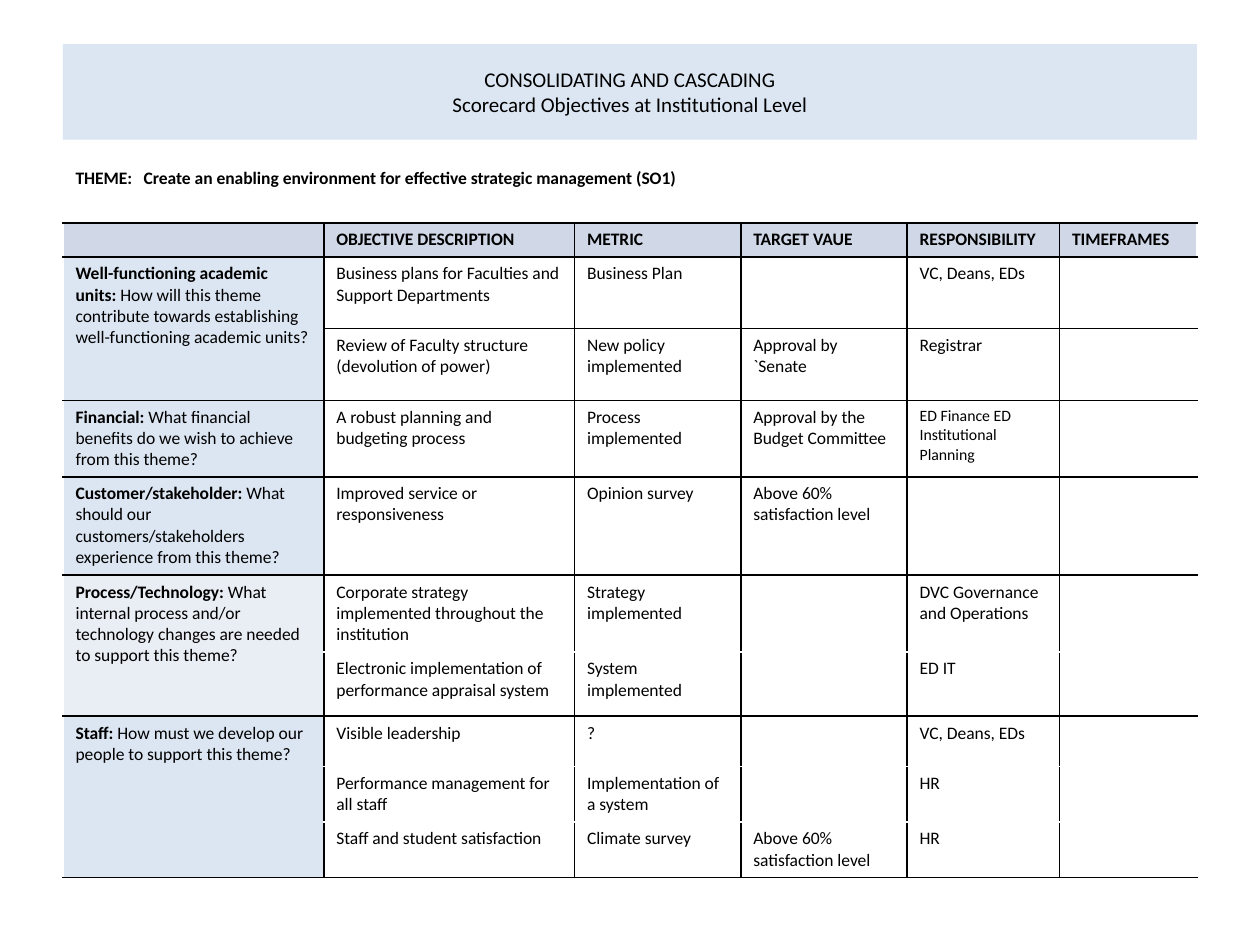
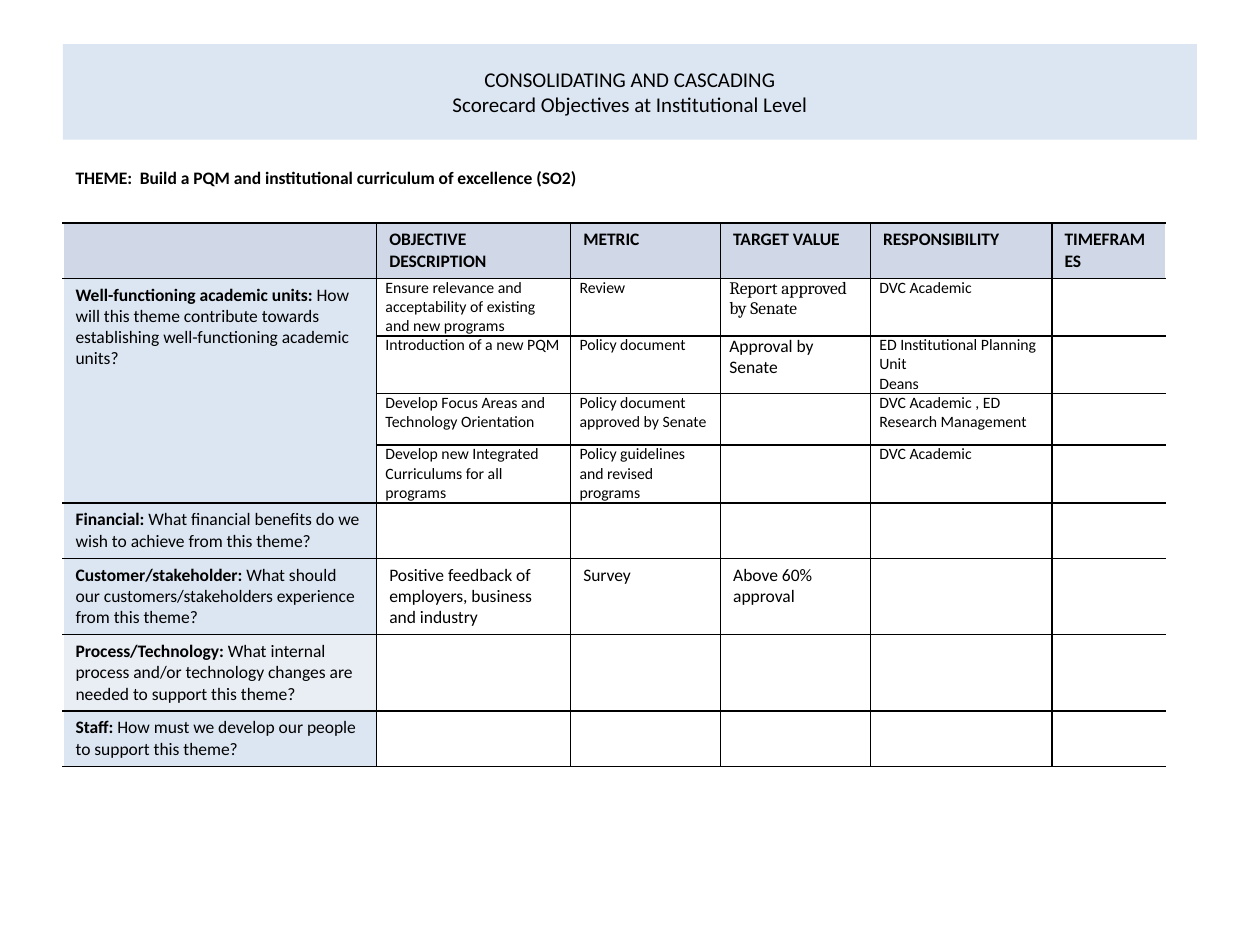
import pptx
import pptx.dml.color
import pptx.enum.shapes
import pptx.enum.text
import pptx.oxml.ns
import pptx.util
from lxml import etree

Inches, Pt = pptx.util.Inches, pptx.util.Pt
qn = pptx.oxml.ns.qn

COLORS = {"text": "000000", "line": "000000", "blank": "FFFFFF",
          "band": "DCE6F2", "header": "D0D8E8", "pale": "E9EDF4"}
TITLE = ["CONSOLIDATING AND CASCADING", "Scorecard Objectives at Institutional Level"]
LEFT, TITLE_TOP, TITLE_W, TITLE_H = 0.5, 0.35, 9, 0.76

PERSPECTIVES = [
    ("Well-functioning academic units: ",
     "How will this theme contribute towards establishing well-functioning academic units?", "band"),
    ("Financial: ", "What financial benefits do we wish to achieve from this theme?", "band"),
    ("Customer/stakeholder: ",
     "What should our customers/stakeholders experience from this theme?", "band"),
    ("Process/Technology: ",
     "What internal process and/or technology changes are needed to support this theme?", "pale"),
    ("Staff: ", "How must we develop our people to support this theme?", "band"),
]

SMALL = {"size": 9}
COMPACT = {"size": 9, "margins": (0.07, 0)}
COMPACT_10 = {**COMPACT, "size": 10}
COMPACT_SERIF = {**COMPACT_10, "font": "Cambria"}

SCORECARDS = [
    {
        "theme": "Create an enabling environment for effective strategic management (SO1)",
        "theme_tab": 0.54,
        "headers": ["OBJECTIVE DESCRIPTION", "METRIC", "TARGET VAUE", "RESPONSIBILITY", "TIMEFRAMES"],
        "cols": [2.07, 1.99, 1.32, 1.32, 1.21, 1.09],
        "rows": [0.66, 0.27, 0.57, 0.57, 0.6, 0.78, 0.61, 0.51, 0.4, 0.44, 0.44],
        "undivided": [3, 4],
        "groups": [
            [["Business plans for Faculties and Support Departments", "Business Plan", "",
              "VC, Deans, EDs"],
             ["Review of Faculty structure (devolution of power)", "New policy implemented",
              "Approval by `Senate", "Registrar"]],
            [["A robust planning and budgeting process", "Process implemented",
              "Approval by the Budget Committee", ("ED Finance ED Institutional Planning", SMALL)]],
            [["Improved service or responsiveness", "Opinion survey",
              "Above 60% satisfaction level", ""]],
            [["Corporate strategy implemented throughout the institution", "Strategy implemented", "",
              "DVC Governance and Operations"],
             ["Electronic implementation of performance appraisal system", "System implemented", "",
              "ED IT"]],
            [["Visible leadership", "?", "", "VC, Deans, EDs"],
             ["Performance management for all staff", "Implementation of a system", "", "HR"],
             ["Staff and student satisfaction", "Climate survey", "Above 60% satisfaction level", "HR"]],
        ],
    },
    {
        "theme": "Build a PQM and institutional curriculum of excellence (SO2)",
        "theme_tab": 0.51,
        "headers": ["OBJECTIVE DESCRIPTION", "METRIC", "TARGET VALUE", "RESPONSIBILITY", "TIMEFRAMES"],
        "cols": [2.49, 1.54, 1.19, 1.19, 1.44, 0.9],
        "rows": [0.66, 0.44, 0.45, 0.45, 0.41, 0.46, 0.44, 0.6, 0.6, 0.44],
        "undivided": [],
        "groups": [
            [[("Ensure relevance and acceptability of existing and new programs", COMPACT),
              ("Review", COMPACT), ("Report approved by Senate", COMPACT_SERIF),
              ("DVC Academic", COMPACT)],
             [("Introduction of a new PQM", COMPACT), ("Policy document", COMPACT),
              ("Approval by Senate", COMPACT_10),
              (["ED Institutional Planning Unit", "Deans"], COMPACT)],
             [("Develop Focus Areas and Technology Orientation", COMPACT),
              ("Policy document approved by Senate", COMPACT), "",
              ("DVC Academic , ED Research Management", COMPACT)],
             [("Develop new Integrated Curriculums for all programs", COMPACT),
              ("Policy guidelines and revised programs", COMPACT), "", ("DVC Academic", COMPACT)]],
            [["", "", "", ""]],
            [["Positive feedback of employers, business and industry", "Survey",
              "Above 60% approval", ""]],
            [["", "", "", ""]],
            [["", "", "", ""]],
        ],
    },
]


def rgb(name):
    return pptx.dml.color.RGBColor.from_string(COLORS[name])


def write(holder, text, size=10, font="Calibri", bold=False, lead="", align=None, margins=None):
    tf = holder.text_frame
    if margins:
        side, top = margins
        target = holder if hasattr(holder, "margin_left") else tf
        target.margin_left = target.margin_right = Inches(side)
        target.margin_top = target.margin_bottom = Inches(top)
    for i, line in enumerate([text] if isinstance(text, str) else text):
        p = tf.paragraphs[0] if i == 0 else tf.add_paragraph()
        p.alignment = align
        for part, strong in ((lead, True), (line, bold)):
            if part:
                r = p.add_run()
                r.text = part
                r.font.size, r.font.name, r.font.bold = Pt(size), font, strong
                r.font.color.rgb = rgb("text")
        if not lead and not line:
            etree.SubElement(p._p, qn("a:endParaRPr"), sz=str(size * 100))


def set_borders(cell, **sides):
    tcPr = cell._tc.get_or_add_tcPr()
    for side in "LRTB":
        ln = etree.SubElement(tcPr, qn("a:ln" + side), w=str(Pt(1)))
        fill = etree.SubElement(ln, qn("a:solidFill"))
        etree.SubElement(fill, qn("a:srgbClr"), val=COLORS[sides.get(side, "line")])


def set_fill(cell, color):
    cell.fill.solid()
    cell.fill.fore_color.rgb = rgb(color)


def add_title(s):
    sp = s.shapes.add_shape(pptx.enum.shapes.MSO_SHAPE.RECTANGLE, Inches(LEFT), Inches(TITLE_TOP),
                            Inches(TITLE_W), Inches(TITLE_H))
    sp.shadow.inherit = False
    sp.fill.solid()
    sp.fill.fore_color.rgb = rgb("band")
    sp.line.fill.background()
    sp.text_frame.vertical_anchor = pptx.enum.text.MSO_ANCHOR.MIDDLE
    write(sp, TITLE, size=12, align=pptx.enum.text.PP_ALIGN.CENTER)


def add_theme(cell, card):
    write(cell, "THEME:\t" + card["theme"], bold=True)
    cell.margin_top = Inches(0.22)
    pPr = cell.text_frame.paragraphs[0]._p.get_or_add_pPr()
    tabs = etree.SubElement(pPr, qn("a:tabLst"))
    etree.SubElement(tabs, qn("a:tab"), pos=str(Inches(card["theme_tab"])), algn="l")


def add_scorecard(s, card):
    cols, rows = card["cols"], card["rows"]
    frame = s.shapes.add_table(len(rows), len(cols), Inches(LEFT), Inches(TITLE_TOP + TITLE_H),
                               Inches(sum(cols)), Inches(sum(rows)))
    table = frame.table
    table.first_row = table.horz_banding = False
    for column, width in zip(table.columns, cols):
        column.width = Inches(width)
    for row, height in zip(table.rows, rows):
        row.height = Inches(height)

    starts, row = [], 2
    open_below = set()
    for g, group in enumerate(card["groups"]):
        starts.append(row)
        if g in card["undivided"]:
            open_below.update(range(row, row + len(group) - 1))
        row += len(group)

    last = len(cols) - 1
    for r in range(len(rows)):
        for c in range(len(cols)):
            sides = {}
            if c == 0 or r == 0:
                sides["L"] = "blank"
            if c == last or r == 0:
                sides["R"] = "blank"
            if r == 0 or (c and r - 1 in open_below):
                sides["T"] = "blank"
            if c and r in open_below:
                sides["B"] = "blank"
            cell = table.cell(r, c)
            set_borders(cell, **sides)
            cell.fill.background()

    table.cell(0, 0).merge(table.cell(0, last))
    add_theme(table.cell(0, 0), card)
    for c, header in enumerate([""] + card["headers"]):
        write(table.cell(1, c), header, bold=True)
        set_fill(table.cell(1, c), "header")

    for start, group, (lead, question, color) in zip(starts, card["groups"], PERSPECTIVES):
        cell = table.cell(start, 0)
        if len(group) > 1:
            cell.merge(table.cell(start + len(group) - 1, 0))
        write(cell, question, lead=lead)
        set_fill(cell, color)
        for r, values in enumerate(group, start):
            for c, value in enumerate(values + [""], 1):
                text, style = value if isinstance(value, tuple) else (value, {})
                write(table.cell(r, c), text, **style)


def main():
    prs = pptx.Presentation()
    prs.slide_width, prs.slide_height = Inches(10), Inches(7.5)
    for card in SCORECARDS:
        s = prs.slides.add_slide(prs.slide_layouts[6])
        add_scorecard(s, card)
        add_title(s)
    prs.save("out.pptx")


if __name__ == "__main__":
    main()
